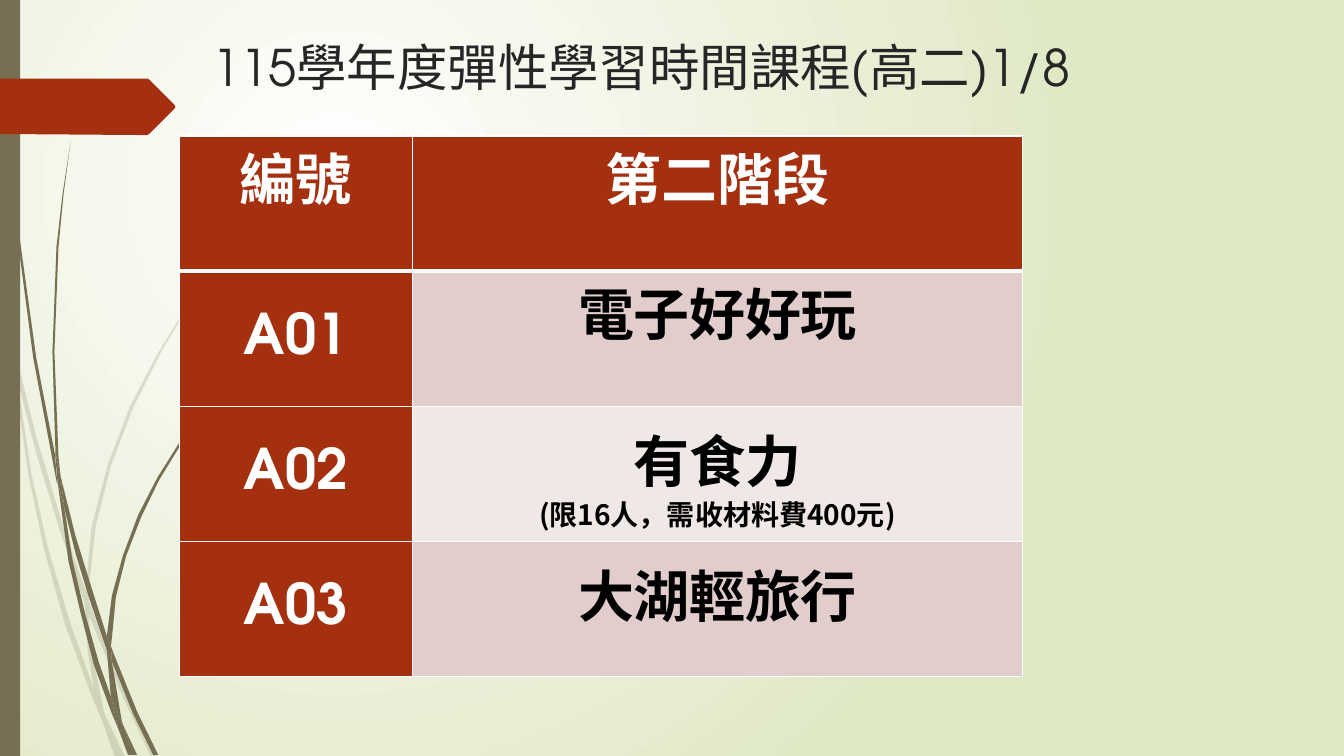
"""Build the course table slide with its grass-stem decoration."""
from dataclasses import dataclass
from typing import Any

from lxml.etree import SubElement
from pptx import Presentation
from pptx.dml.color import RGBColor
from pptx.enum.shapes import MSO_SHAPE
from pptx.enum.text import MSO_ANCHOR, PP_ALIGN
from pptx.oxml.ns import qn
from pptx.util import Inches, Pt

COLORS = {
    "white": "FFFFFF", "meadow": "DFE8C4", "stem": "766F54", "rust": "A53010",
    "title": "262626", "black": "000000", "band_dark": "E1CDCC", "band_light": "F0E8E7",
}
LATIN = "TeX Gyre Adventor"
CHINESE = "Noto Sans CJK TC"
Points = tuple[tuple[float, float], ...]


@dataclass
class Line:
    text: str
    font: dict[str, Any]
    color: str
    tracking: int = 0
    paragraph: dict[str, Any] | None = None


@dataclass
class Cell:
    lines: tuple[Line, ...]
    fill: str
    anchor: MSO_ANCHOR = MSO_ANCHOR.TOP
    top: float = 0
    side: float = 0.07


@dataclass
class Grass:
    opacity: int
    blades: tuple[Points, ...]


PALE_GRASS = Grass(20, (
    ((0.11, 3.5), (0.09, 3.22), (0, 2.82), (0, 2.99), (0.1, 3.44)),
    ((0.58, 5.22), (0.84, 5.99), (0.85, 5.86), (0.62, 5.2), (0.36, 4.33), (0.14, 3.45),
     (0.17, 3.76), (0.36, 4.5)),
    ((0.92, 6.07), (0.88, 5.96), (0.88, 6.1), (1.23, 6.94), (1.5, 7.51), (1.55, 7.51),
     (1.27, 6.92)),
    ((1.19, 7.51), (1.24, 7.51), (1.05, 7.11)),
    ((0.93, 6.83), (0.7, 6.19), (0.48, 5.45), (0.31, 4.69), (0.17, 3.76), (0.11, 3.5),
     (0.28, 4.7), (0.44, 5.46), (0.65, 6.21), (0.92, 6.93), (1.01, 7.14), (0.99, 7.07)),
    ((0.84, 5.99), (0.87, 6.46), (0.93, 6.83), (0.96, 6.92), (1.05, 7.11), (1.03, 7.06),
     (0.91, 6.46), (0.88, 6.1), (0.88, 6.08)),
    ((0.88, 5.84), (0.95, 5.22), (1.1, 4.62), (1.32, 4.05), (1.6, 3.49), (1.92, 2.96),
     (2.29, 2.45), (2.68, 1.98), (2.9, 1.75), (3.12, 1.54), (3.12, 1.53), (2.89, 1.75),
     (2.68, 1.97), (2.28, 2.44), (1.91, 2.95), (1.58, 3.48), (1.29, 4.03), (1.07, 4.61),
     (0.91, 5.22), (0.85, 5.84), (0.85, 5.86), (0.88, 5.96)),
    ((1.01, 7.14), (1.14, 7.51), (1.19, 7.51)),
    ((0.88, 6.08), (0.88, 6.1), (0.88, 5.96), (0.85, 5.86), (0.84, 5.99)),
    ((0.96, 6.92), (0.93, 6.83), (0.99, 7.07), (1.01, 7.14), (1.19, 7.51), (1.05, 7.11)),
))
DARK_GRASS = Grass(100, (
    ((0.07, 1.1), (0.17, 2.33), (0.33, 3.55), (0.56, 4.77), (0.57, 4.81), (0.55, 4.57),
     (0.55, 4.53), (0.36, 3.55), (0.19, 2.32), (0.08, 1.09), (0.05, 0.48), (0.04, 0),
     (0.03, 0), (0.04, 0.48)),
    ((0.88, 5.92), (1.06, 6.45), (1.06, 6.31), (0.93, 5.9), (0.75, 5.32), (0.6, 4.72),
     (0.64, 5.05), (0.75, 5.49)),
    ((1.13, 6.49), (1.1, 6.41), (1.11, 6.56), (1.32, 7.08), (1.52, 7.49), (1.57, 7.49),
     (1.36, 7.06)),
    ((1.1, 6.91), (0.98, 6.57), (0.84, 6.07), (0.72, 5.56), (0.64, 5.05), (0.57, 4.77),
     (0.68, 5.57), (0.8, 6.08), (0.93, 6.59), (1.11, 7.08), (1.17, 7.22), (1.16, 7.17)),
    ((0.6, 4.72), (0.58, 4.53), (0.54, 3.49), (0.58, 2.45), (0.63, 1.93), (0.7, 1.41),
     (0.62, 1.93), (0.56, 2.45), (0.52, 3.49), (0.55, 4.49)),
    ((1.33, 7.49), (1.36, 7.49), (1.22, 7.19)),
    ((0.57, 4.77), (0.64, 5.05), (0.6, 4.72), (0.55, 4.49), (0.55, 4.53)),
    ((1.11, 6.33), (1.15, 5.92), (1.25, 5.52), (1.4, 5.13), (1.58, 4.76), (1.8, 4.4),
     (2.05, 4.06), (2.31, 3.74), (2.45, 3.59), (2.61, 3.44), (2.6, 3.44), (2.45, 3.58),
     (2.31, 3.73), (2.04, 4.05), (1.78, 4.39), (1.56, 4.74), (1.37, 5.11), (1.22, 5.51),
     (1.11, 5.91), (1.06, 6.31), (1.1, 6.41)),
    ((1.17, 7.22), (1.27, 7.49), (1.31, 7.49)),
    ((1.06, 6.45), (1.1, 6.91), (1.16, 7.06), (1.22, 7.19), (1.21, 7.16), (1.11, 6.56),
     (1.09, 6.51)),
    ((1.06, 6.45), (1.09, 6.51), (1.11, 6.56), (1.1, 6.41), (1.06, 6.31)),
    ((1.16, 7.06), (1.1, 6.91), (1.16, 7.17), (1.17, 7.22), (1.3, 7.49), (1.33, 7.49),
     (1.22, 7.19)),
))
RIBBON: Points = (
    (1.74, 1.06), (1.73, 1.08), (1.48, 1.33), (1.46, 1.34), (1.36, 1.34), (0, 1.33),
    (0, 0.78), (1.46, 0.78), (1.48, 0.79), (1.73, 1.04),
)

LABEL_FONT = {"name": LATIN, "size": Pt(40), "bold": True}
COURSE_FONT = {"name": CHINESE, "size": Pt(40), "bold": True}
NOTE_FONT = {"name": "Noto Sans CJK SC", "size": Pt(20), "bold": True}
TIGHT = {"line_spacing": Pt(15.3)}
NOTE_SPACING = TIGHT | {"space_before": Pt(9.8)}


def label(text: str, anchor: MSO_ANCHOR = MSO_ANCHOR.MIDDLE) -> Cell:
    return Cell((Line(text, LABEL_FONT, "white"),), "rust", anchor)


def course(text: str, spacing: dict[str, Any] | None = None) -> Line:
    return Line(text, COURSE_FONT, "black", -20, spacing)


NOTE = Line("(限16人，需收材料費400元)", NOTE_FONT, "black", 0, NOTE_SPACING)
ROWS = (
    (label("編號", MSO_ANCHOR.TOP), label("第二階段", MSO_ANCHOR.TOP)),
    (label("A01"), Cell((course("電子好好玩"),), "band_dark", side=0)),
    (label("A02"), Cell((course("有食力", TIGHT), NOTE), "band_light", top=0.7, side=0)),
    (label("A03"), Cell((course("大湖輕旅行", TIGHT),), "band_dark", top=0.7, side=0)),
)


def rgb(name: str) -> RGBColor:
    return RGBColor.from_string(COLORS[name])


def apply(target: Any, values: dict[str, Any]) -> None:
    for name, value in values.items():
        setattr(target, name, value)


def paint(shape: Any, color: str, opacity: int = 100) -> None:
    shape.shadow.inherit = False
    shape.fill.solid()
    shape.fill.fore_color.rgb = rgb(color)
    shape.line.fill.background()
    if opacity < 100:
        fill_color = shape._element.spPr.find(f"{qn('a:solidFill')}/{qn('a:srgbClr')}")
        SubElement(fill_color, qn("a:alpha"), val=str(opacity * 1000))


def draw_outline(shapes: Any, points: Points, color: str, opacity: int = 100) -> None:
    corners = [(Inches(x), Inches(y)) for x, y in points]
    builder = shapes.build_freeform(*corners[0])
    builder.add_line_segments(corners[1:], close=True)
    paint(builder.convert_to_shape(), color, opacity)


def write(paragraph: Any, line: Line) -> None:
    apply(paragraph, line.paragraph or {})
    run = paragraph.add_run()
    run.text = line.text
    apply(run.font, line.font)
    run.font.color.rgb = rgb(line.color)
    properties = run.font._element
    properties.set("spc", str(line.tracking))
    east_asian = CHINESE if line.font["name"] == LATIN else line.font["name"]
    SubElement(properties, qn("a:ea"), typeface=east_asian)


def draw_cell(table_cell: Any, cell: Cell, row: int) -> None:
    apply(table_cell, {
        "margin_left": Inches(cell.side), "margin_right": Inches(cell.side),
        "margin_top": Inches(cell.top), "margin_bottom": 0, "vertical_anchor": cell.anchor,
    })
    properties = table_cell._tc.get_or_add_tcPr()
    for side in ("lnL", "lnR", "lnT", "lnB"):
        heavy = (row, side) in ((0, "lnB"), (1, "lnT"))
        border = SubElement(properties, qn(f"a:{side}"), w=str(Pt(3 if heavy else 1)))
        solid = SubElement(border, qn("a:solidFill"))
        SubElement(solid, qn("a:srgbClr"), val=COLORS["white"])
    table_cell.fill.solid()
    table_cell.fill.fore_color.rgb = rgb(cell.fill)
    for index, line in enumerate(cell.lines):
        frame = table_cell.text_frame
        paragraph = frame.add_paragraph() if index else frame.paragraphs[0]
        paragraph.alignment = PP_ALIGN.CENTER
        write(paragraph, line)


def draw_background(slide: Any) -> None:
    fill = slide.background.fill
    fill.gradient()
    for stop, color in zip(fill.gradient_stops, ("white", "meadow")):
        stop.color.rgb = rgb(color)
    gradient = slide._element.find(f".//{qn('a:gradFill')}")
    gradient.remove(gradient.find(qn("a:lin")))
    circle = SubElement(gradient, qn("a:path"), path="circle")
    SubElement(circle, qn("a:fillToRect"), l="50000", t="50000", r="100000", b="100000")


def main() -> None:
    presentation = Presentation()
    apply(presentation, {"slide_width": Inches(13.33), "slide_height": Inches(7.5)})
    slide = presentation.slides.add_slide(presentation.slide_layouts[6])
    draw_background(slide)
    for grass in (PALE_GRASS, DARK_GRASS):
        group = slide.shapes.add_group_shape()
        for blade in grass.blades:
            draw_outline(group.shapes, blade, "stem", grass.opacity)
    bar = slide.shapes.add_shape(MSO_SHAPE.RECTANGLE, 0, 0, Inches(0.2), Inches(7.5))
    paint(bar, "stem")
    draw_outline(slide.shapes, RIBBON, "rust")
    title = slide.shapes.add_textbox(Inches(2.01), Inches(0.31), Inches(9.75), Inches(1.4))
    title.text_frame.word_wrap = True
    title_font = {"name": LATIN, "size": Pt(36)}
    write(title.text_frame.paragraphs[0],
          Line("115學年度彈性學習時間課程(高二)1/8", title_font, "title"))
    table = slide.shapes.add_table(
        len(ROWS), 2, Inches(1.78), Inches(1.35), Inches(8.36), Inches(5.36)).table
    table.horz_banding = False
    for column, width in zip(table.columns, (2.31, 6.05)):
        column.width = Inches(width)
    for row, cells in enumerate(ROWS):
        for column, cell in enumerate(cells):
            draw_cell(table.cell(row, column), cell, row)
    presentation.save("out.pptx")


if __name__ == "__main__":
    main()
